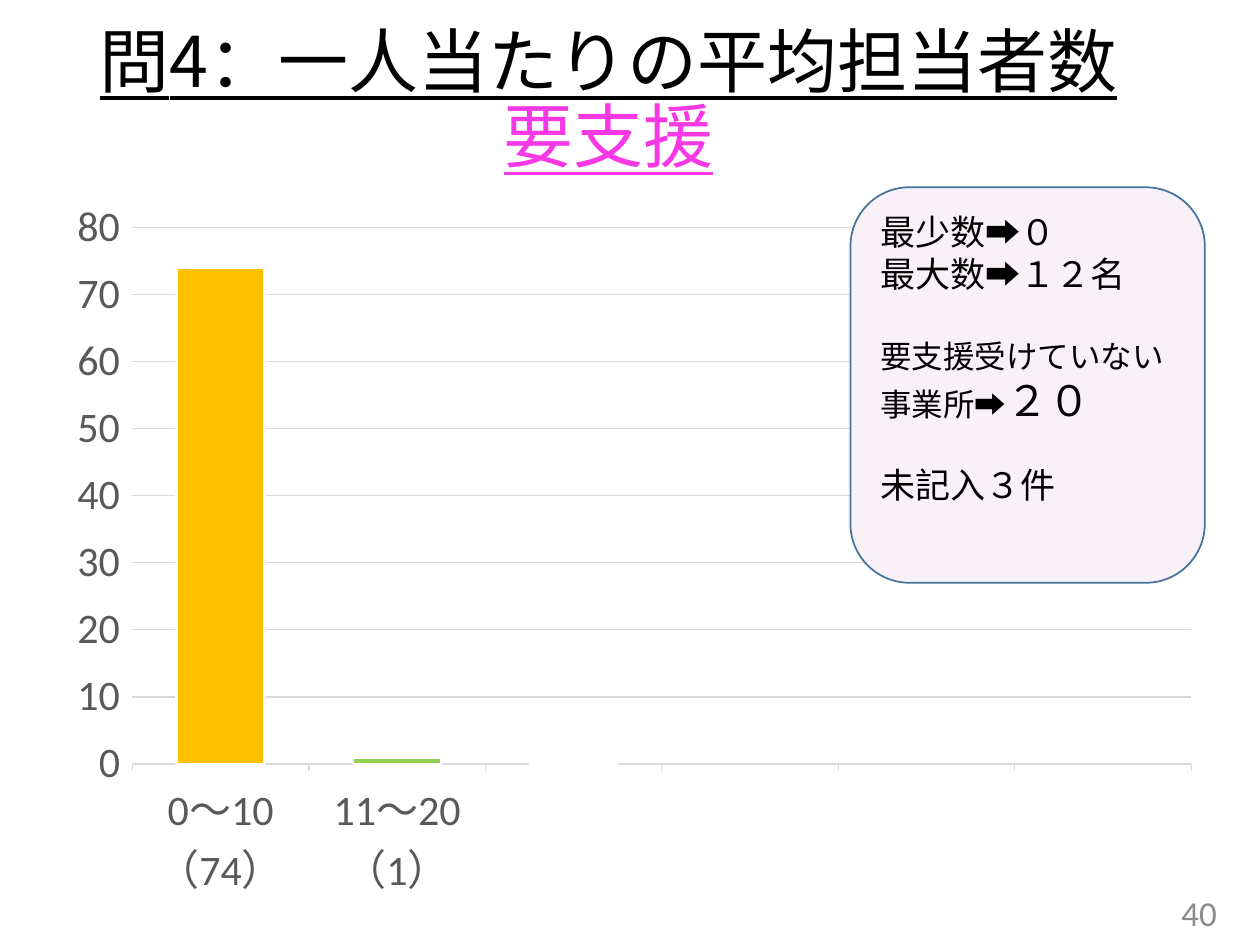
from lxml.etree import SubElement
from pptx import Presentation
from pptx.chart.data import CategoryChartData as ChartData
from pptx.dml.color import RGBColor as RGB
from pptx.enum.chart import XL_CHART_TYPE as Kind, XL_TICK_MARK as Tick
from pptx.enum.shapes import MSO_SHAPE as Shape
from pptx.enum.text import MSO_ANCHOR as Anchor, MSO_AUTO_SIZE as Fit, PP_ALIGN as Align
from pptx.oxml.ns import qn
from pptx.util import Pt

BLACK = RGB(0x00, 0x00, 0x00)
WHITE = RGB(0xFF, 0xFF, 0xFF)
PINK = RGB(0xF7, 0x39, 0xE5)
GRAY = RGB(0x59, 0x59, 0x59)
PALE = RGB(0xD9, 0xD9, 0xD9)
DIM = RGB(0x8C, 0x8C, 0x8C)
LILAC = RGB(0xF8, 0xF2, 0xF8)
NAVY = RGB(0x43, 0x73, 0x9E)
BLUE = RGB(0x5B, 0x9B, 0xD5)
BARS = [RGB(0xFF, 0xC0, 0x00), RGB(0x92, 0xD0, 0x50), RGB(0x00, 0xB0, 0xF0),
        RGB(0x70, 0x30, 0xA0), RGB(0xFF, 0x66, 0xCC), BLUE]
LATIN = "Calibri"
CJK = "Noto Sans CJK JP"


def place(shape, left, top, width, height):
    shape.left, shape.top = Pt(left), Pt(top)
    shape.width, shape.height = Pt(width), Pt(height)


def style(font, size, color, name=LATIN):
    font.size, font.name = Pt(size), name
    font.color.rgb = color


def add_run(para, text, size, color=BLACK, name=LATIN):
    run = para.add_run()
    run.text = text
    style(run.font, size, color, name)
    return run


def add_title(slide):
    title = slide.shapes.title
    place(title, 6.5, 10, 682.5, 97)
    frame = title.text_frame
    frame.auto_size = Fit.NONE
    frame.vertical_anchor = Anchor.MIDDLE
    para = frame.paragraphs[0]
    para.alignment, para.line_spacing = Align.CENTER, 0.9
    for text, color in (("問4：一人当たりの平均担当者数", BLACK), ("要支援", PINK)):
        if para.runs:
            para.add_line_break()
        run = add_run(para, text, 40, color, CJK)
        run.font.underline = True
        SubElement(run.font._element, qn("a:ea"), typeface=CJK)


def style_axis(axis):
    axis.major_tick_mark, axis.minor_tick_mark = Tick.OUTSIDE, Tick.NONE
    style(axis.tick_labels.font, 24, GRAY)


def add_chart(slide):
    data = ChartData()
    data.categories = ["0～10（74）", "11～20（1）", "", "", "", ""]
    data.add_series("Series 1", [74, 1, 0, None, None, None])
    chart = slide.shapes.add_chart(
        Kind.COLUMN_CLUSTERED, Pt(31), Pt(107), Pt(663), Pt(414), data).chart
    chart.has_legend = chart.has_title = False
    style(chart.font, 24, BLACK)

    cats, vals = chart.category_axis, chart.value_axis
    style_axis(cats)
    style_axis(vals)
    vals.format.line.fill.background()
    for line in (cats.format.line, vals.major_gridlines.format.line):
        line.color.rgb, line.width = PALE, Pt(0.75)

    plot = chart.plots[0]
    plot.gap_width, plot.vary_by_categories = 100, False
    series = plot.series[0]
    series.format.fill.solid()
    series.format.fill.fore_color.rgb = BLUE
    for i, color in enumerate(BARS):
        form = series.points[i].format
        form.fill.solid()
        form.fill.fore_color.rgb = color
        form.line.color.rgb, form.line.width = WHITE, Pt(1.5)


def add_note(slide):
    note = slide.shapes.add_shape(
        Shape.ROUNDED_RECTANGLE, Pt(486), Pt(107), Pt(202.5), Pt(226))
    note.shadow.inherit = False
    note.fill.solid()
    note.fill.fore_color.rgb = LILAC
    note.line.color.rgb, note.line.width = NAVY, Pt(1)
    frame = note.text_frame
    frame.word_wrap, frame.vertical_anchor = True, Anchor.TOP
    rows = [
        (0, [("最少数➡０", 20)]),
        (0, [("最大数➡１２名", 20)]),
        (24, [("要支援受けていない事業所➡", 18), ("２０", 24)]),
        (22, [("未記入３件", 20)]),
    ]
    for i, (gap, runs) in enumerate(rows):
        para = frame.add_paragraph() if i else frame.paragraphs[0]
        para.alignment, para.space_before = Align.LEFT, Pt(gap)
        for text, size in runs:
            add_run(para, text, size)


def add_number(slide):
    box = slide.shapes.add_textbox(Pt(540.5), Pt(507), Pt(162), Pt(29))
    frame = box.text_frame
    frame.word_wrap, frame.vertical_anchor = True, Anchor.MIDDLE
    para = frame.paragraphs[0]
    para.alignment = Align.RIGHT
    add_run(para, "40", 20, DIM)


def main():
    deck = Presentation()
    deck.slide_width, deck.slide_height = Pt(720), Pt(540)
    slide = deck.slides.add_slide(deck.slide_layouts[5])
    add_title(slide)
    add_chart(slide)
    add_number(slide)
    add_note(slide)
    deck.save("out.pptx")


if __name__ == "__main__":
    main()
